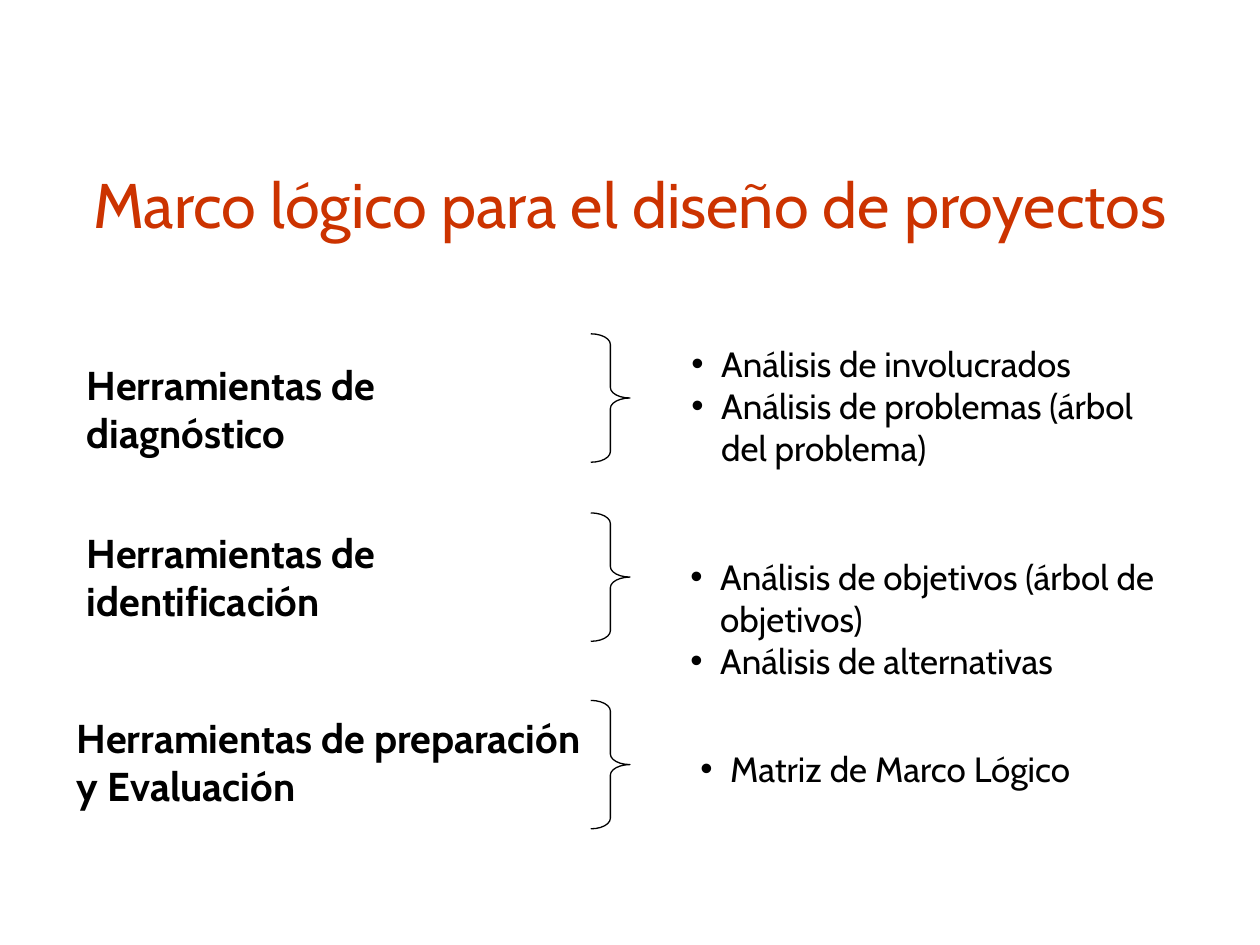
from pptx import Presentation
from pptx import util as u
from pptx.dml.color import RGBColor
from pptx.enum import shapes, text
from pptx.oxml.ns import qn
from lxml import etree

RED = RGBColor(0xCC, 0x33, 0x00)
BLACK = RGBColor(0, 0, 0)
FONT = "Cabin"
INDENT = u.Cm(0.6)


def add_text(page, place, lines, size, color, bold=False, bullets=False):
    box = page.shapes.add_textbox(*[u.Cm(length) for length in place])
    frame = box.text_frame
    frame.word_wrap = True
    frame.text = "\n".join(lines)
    for para in frame.paragraphs:
        if bullets:
            props = para._p.get_or_add_pPr()
            props.set("marL", str(INDENT))
            props.set("indent", str(-INDENT))
            etree.SubElement(props, qn("a:buFont")).set("typeface", "Arial")
            etree.SubElement(props, qn("a:buChar")).set("char", "•")
        for span in para.runs:
            span.font.name = FONT
            span.font.size = u.Pt(size)
            span.font.bold = bold
            span.font.color.rgb = color
    return frame


deck = Presentation()
deck.slide_width, deck.slide_height = u.Cm(25.4), u.Cm(19.05)
page = deck.slides.add_slide(deck.slide_layouts[6])

# Title
title = add_text(page, (1.27, 2.51, 22.86, 3.18),
                 ["Marco lógico para el diseño de proyectos"], 36, RED)
title.vertical_anchor = text.MSO_ANCHOR.MIDDLE
title.paragraphs[0].alignment = text.PP_ALIGN.CENTER

# Each stage: heading, its place, brace top, tools, their place, wrapping
stages = [
    ("Herramientas de diagnóstico", (1.5, 7.14, 8, 2.21), 6.73,
     ["Análisis de involucrados", "Análisis de problemas (árbol del problema)"],
     (13.69, 6.78, 10.41, 2.79), True),
    ("Herramientas de identificación", (1.5, 10.52, 8.99, 2.21), 10.34,
     ["Análisis de objetivos (árbol de objetivos)", "Análisis de alternativas"],
     (13.67, 11.07, 10.85, 2.79), True),
    ("Herramientas de preparación y Evaluación", (1.3, 14.25, 11, 2.21), 14.12,
     ["Matriz de Marco Lógico"], (13.87, 14.94, 8, 1.09), False),
]

for heading, heading_place, brace_top, tools, tools_place, wrap in stages:
    add_text(page, heading_place, [heading], 23, BLACK, bold=True)

    # Brace between heading and tools
    brace = page.shapes.add_shape(
        shapes.MSO_SHAPE.RIGHT_BRACE,
        u.Cm(11.91), u.Cm(brace_top), u.Cm(0.79), u.Cm(2.59))
    brace.adjustments[0] = 0.27
    brace.shadow.inherit = False
    brace.fill.background()
    brace.line.color.rgb = BLACK
    brace.line.width = u.Pt(0.75)

    # Bulleted tools
    frame = add_text(page, tools_place, tools, 20, BLACK, bullets=True)
    frame.vertical_anchor = text.MSO_ANCHOR.MIDDLE
    frame.word_wrap = wrap

deck.save("out.pptx")
